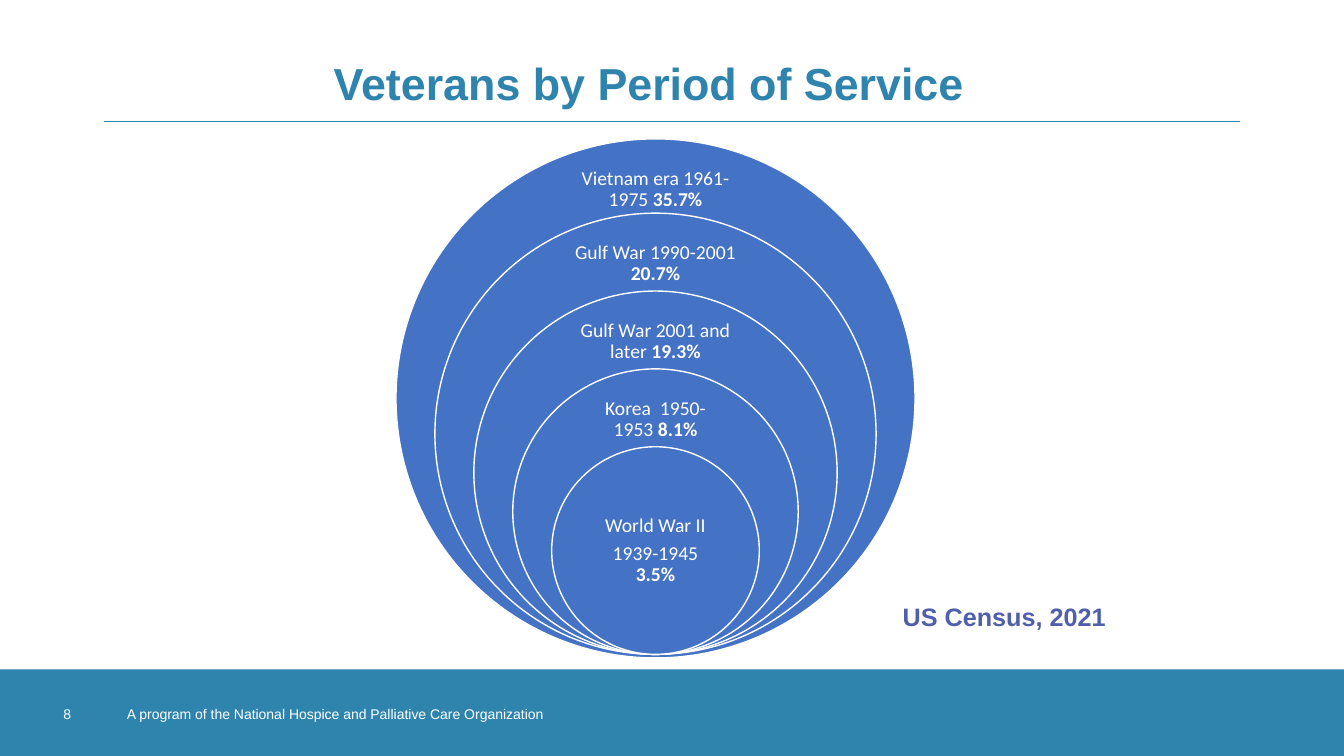
from lxml.etree import SubElement
from pptx import Presentation
from pptx.dml.color import RGBColor
from pptx.enum.shapes import MSO_CONNECTOR, MSO_SHAPE
from pptx.enum.text import MSO_ANCHOR, PP_ALIGN
from pptx.oxml.ns import qn
from pptx.util import Cm, Pt

TEAL = RGBColor(0x2F, 0x84, 0xAE)
BLUE = RGBColor(0x44, 0x72, 0xC4)
INDIGO = RGBColor(0x4F, 0x5F, 0xAB)
WHITE = RGBColor(0xFF, 0xFF, 0xFF)

# Each ring, from the outermost in: lines of (period, share), label width in cm
PERIODS = [
    ([("Vietnam era 1961-1975 ", "35.7%")], 4.9),
    ([("Gulf War 1990-2001 ", "20.7%")], 4.8),
    ([("Gulf War 2001 and later ", "19.3%")], 4.75),
    ([("Korea  1950-1953 ", "8.1%")], 3.89),
    ([("World War II", ""), ("1939-1945 ", "3.5%")], 3.71),
]
RING_STEP = 0.15
RING_LIFT = 0.09
LABEL_DROP = 0.63
LABEL_HEIGHT = 1.3
CORE_LABEL_HEIGHT = 2.62


def style_font(font, name, size, color, bold=False):
    font.name = name
    font.size = Pt(size)
    font.color.rgb = color
    font.bold = bold


def add_line_of_text(page, text, left, top, width, height, size, color, bold=False):
    box = page.shapes.add_textbox(Cm(left), Cm(top), Cm(width), Cm(height))
    frame = box.text_frame
    frame.word_wrap = True
    frame.text = text
    style_font(frame.paragraphs[0].runs[0].font, "Arial", size, color, bold)


def add_heading(page, left, top, width, height):
    title = page.shapes.title
    title.left, title.top = Cm(left), Cm(top)
    title.width, title.height = Cm(width), Cm(height)
    frame = title.text_frame
    frame.text = "Veterans by Period of Service"
    frame.vertical_anchor = MSO_ANCHOR.MIDDLE
    paragraph = frame.paragraphs[0]
    paragraph.alignment = PP_ALIGN.CENTER
    paragraph.line_spacing = 0.9
    style_font(paragraph.runs[0].font, "Arial", 32, TEAL, True)

    rule_top = Cm(top + height - 0.1)
    rule = page.shapes.add_connector(
        MSO_CONNECTOR.STRAIGHT, Cm(left + 1.29), rule_top, Cm(left + 29.91), rule_top)
    rule.line.color.rgb = TEAL
    rule.line.width = Pt(0.5)
    SubElement(rule._element.spPr, qn("a:effectLst"))


def add_ring(group, left, top, diameter):
    ring = group.shapes.add_shape(
        MSO_SHAPE.OVAL, Cm(left), Cm(top), Cm(diameter), Cm(diameter))
    ring.shadow.inherit = False
    ring.fill.solid()
    ring.fill.fore_color.rgb = BLUE
    ring.line.color.rgb = WHITE
    ring.line.width = Pt(1)


def add_ring_label(group, lines, left, top, width, height):
    box = group.shapes.add_textbox(Cm(left), Cm(top), Cm(width), Cm(height))
    frame = box.text_frame
    frame.word_wrap = True
    frame.vertical_anchor = MSO_ANCHOR.MIDDLE
    frame.margin_left = frame.margin_right = Cm(0.28)
    frame.margin_top = frame.margin_bottom = Cm(0.28)
    for index, (period, share) in enumerate(lines):
        paragraph = frame.add_paragraph() if index else frame.paragraphs[0]
        paragraph.alignment = PP_ALIGN.CENTER
        paragraph.line_spacing = 0.9
        paragraph.space_after = Pt(4.9)
        for text, bold in ((period, False), (share, True)):
            if text:
                span = paragraph.add_run()
                span.text = text
                style_font(span.font, "Calibri", 14, WHITE, bold)


def add_nested_rings(page, left, top, size):
    """Draw the stacked circles, which share a centre line and nearly a base."""
    group = page.shapes.add_group_shape()
    centre = left + size / 2
    core = len(PERIODS) - 1
    for index, (lines, label_width) in enumerate(PERIODS):
        diameter = size * (1 - RING_STEP * index)
        base = top + size - (RING_LIFT if index else 0)
        ring_top = base - diameter
        add_ring(group, centre - diameter / 2, ring_top, diameter)
        if index == core:
            height = CORE_LABEL_HEIGHT
            label_top = ring_top + (diameter - height) / 2
        else:
            height = LABEL_HEIGHT
            label_top = ring_top + LABEL_DROP
        add_ring_label(group, lines, centre - label_width / 2, label_top,
                       label_width, height)


def add_footer(page, left, top, width, height):
    band = page.shapes.add_shape(
        MSO_SHAPE.RECTANGLE, Cm(left), Cm(top), Cm(width), Cm(height))
    band.shadow.inherit = False
    band.fill.solid()
    band.fill.fore_color.rgb = TEAL
    band.line.fill.background()
    text_top = top + 0.78
    add_line_of_text(page, "8", left + 1.35, text_top, 1.27, 1.02, 10, WHITE)
    add_line_of_text(
        page, "A program of the National Hospice and Palliative Care Organization",
        left + 2.95, text_top, 11.76, 1.02, 10, WHITE)


def main():
    deck = Presentation()
    deck.slide_width, deck.slide_height = Cm(33.87), Cm(19.05)
    page = deck.slides.add_slide(deck.slide_layouts[5])
    add_footer(page, 0, 16.87, 33.87, 2.18)
    add_heading(page, 1.33, 1.19, 30.05, 1.96)
    add_nested_rings(page, 9.98, 3.5, 13.08)
    add_line_of_text(page, "US Census, 2021", 22.5, 15.04, 6.63, 1.02, 18, INDIGO, True)
    deck.save("out.pptx")


if __name__ == "__main__":
    main()
